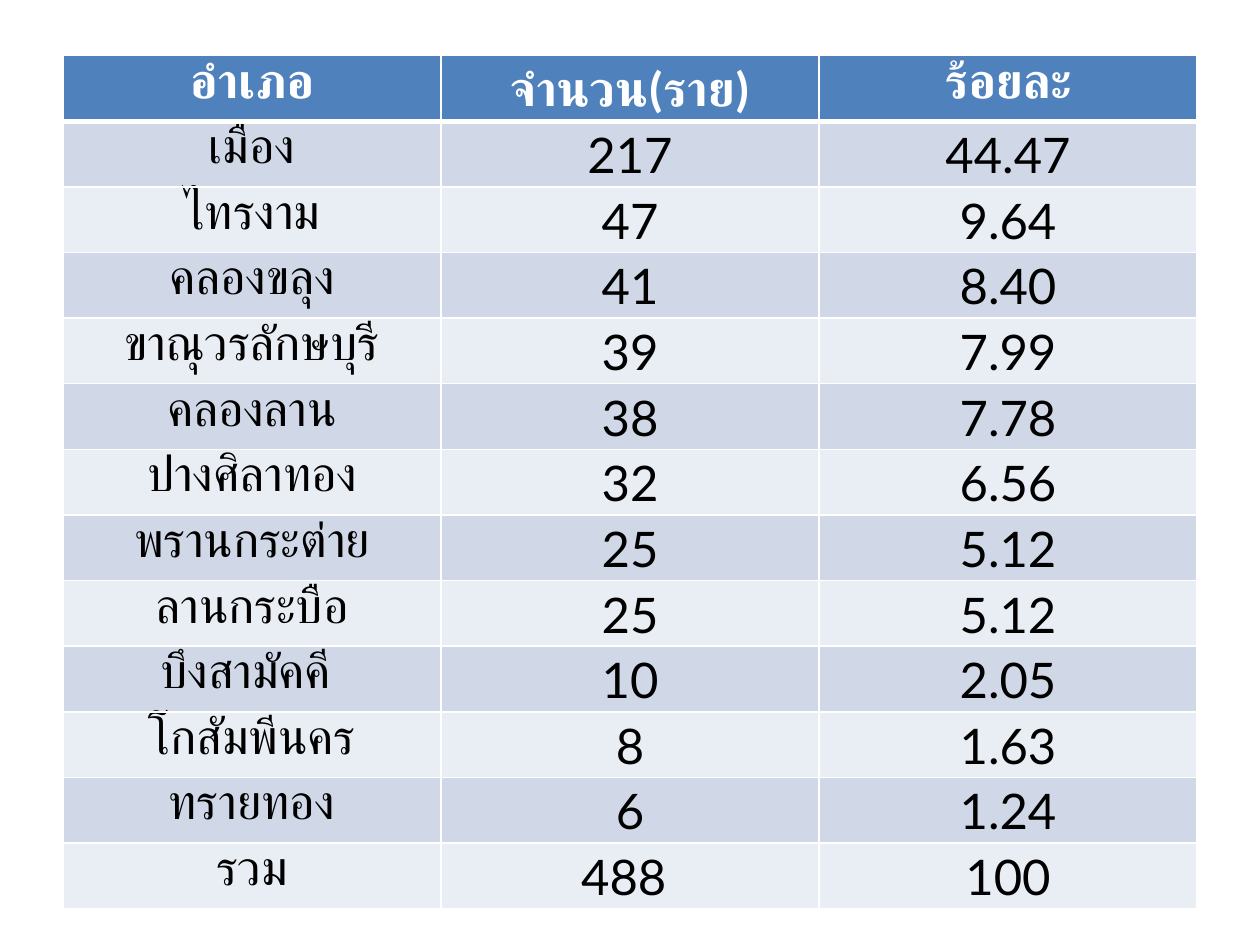
from typing import NamedTuple

from lxml.etree import SubElement
from pptx import Presentation
from pptx.dml.color import RGBColor
from pptx.enum.text import PP_ALIGN
from pptx.oxml.ns import qn
from pptx.table import Table, _Cell
from pptx.util import Cm, Pt

WHITE = RGBColor(0xFF, 0xFF, 0xFF)
BLACK = RGBColor(0x00, 0x00, 0x00)
BLUE = RGBColor(0x4F, 0x81, 0xBD)
BANDS = (RGBColor(0xE9, 0xED, 0xF4), RGBColor(0xD0, 0xD8, 0xE8))
THIN, THICK = Pt(1), Pt(3)

INSET = {
    "margin_left": Cm(0.18),
    "margin_right": Cm(0.18),
    "margin_top": Cm(0),
    "margin_bottom": Cm(0),
}
LAYOUT = {"alignment": PP_ALIGN.CENTER, "line_spacing": 1.07}


class Record(NamedTuple):
    place: str
    count: str
    share: str


RECORDS = (
    Record("อำเภอ", "จำนวน(ราย)", "ร้อยละ"),
    Record("เมือง", "217", "44.47"),
    Record("ไทรงาม", "47", "9.64"),
    Record("คลองขลุง", "41", "8.40"),
    Record("ขาณุวรลักษบุรี", "39", "7.99"),
    Record("คลองลาน", "38", "7.78"),
    Record("ปางศิลาทอง", "32", "6.56"),
    Record("พรานกระต่าย", "25", "5.12"),
    Record("ลานกระบือ", "25", "5.12"),
    Record("บึงสามัคคี ", "10", "2.05"),
    Record("โกสัมพีนคร", "8", "1.63"),
    Record("ทรายทอง", "6", "1.24"),
    Record("รวม", "488 ", "100"),
)


def apply(target: object, values: dict) -> None:
    for name, value in values.items():
        setattr(target, name, value)


def border(cell: _Cell, row: int) -> None:
    props = cell._tc.get_or_add_tcPr()
    widths = {
        "a:lnL": THIN,
        "a:lnR": THIN,
        "a:lnT": THICK if row == 1 else THIN,
        "a:lnB": THICK if row == 0 else THIN,
    }
    for tag, width in widths.items():
        line = SubElement(props, qn(tag), w=str(width))
        fill = SubElement(line, qn("a:solidFill"))
        SubElement(fill, qn("a:srgbClr"), val=str(WHITE))


def write(cell: _Cell, text: str, row: int, col: int) -> None:
    head = row == 0
    border(cell, row)
    apply(cell, INSET)
    cell.fill.solid()
    cell.fill.fore_color.rgb = BLUE if head else BANDS[row % 2]
    para = cell.text_frame.paragraphs[0]
    apply(para, LAYOUT)
    run = para.add_run()
    run.text = text
    face = "Calibri" if head or col == 0 else "Lato"
    apply(run.font, {"name": face, "size": Pt(28), "bold": head})
    run.font.color.rgb = WHITE if head else BLACK


def fill_table(table: Table) -> None:
    for row, record in enumerate(RECORDS):
        for col, text in enumerate(record):
            write(table.cell(row, col), text, row, col)


def main() -> None:
    deck = Presentation()
    apply(deck, {"slide_width": Cm(25.4), "slide_height": Cm(19.05)})
    slide = deck.slides.add_slide(deck.slide_layouts[6])
    frame = slide.shapes.add_table(
        len(RECORDS), len(Record._fields),
        Cm(1.27), Cm(1.12), Cm(22.86), Cm(17.2),
    )
    fill_table(frame.table)
    deck.save("out.pptx")


if __name__ == "__main__":
    main()
